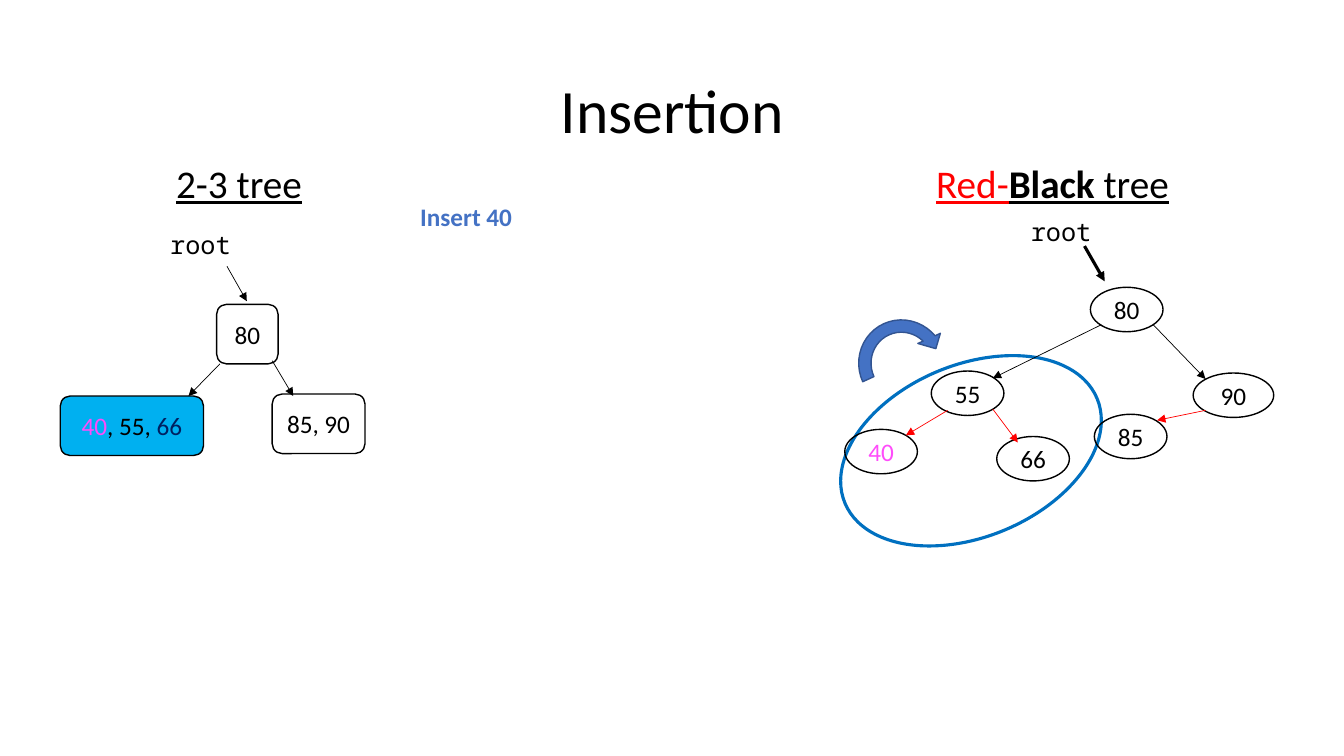
"""Build a slide that sets a 2-3 tree beside a red-black tree after inserting 40."""
from dataclasses import dataclass

from lxml import etree
from pptx import Presentation
from pptx import util as u
from pptx.dml.color import RGBColor
from pptx.enum import shapes, text
from pptx.oxml.ns import qn

KIND = shapes.MSO_SHAPE
ALIGN = text.PP_ALIGN


@dataclass(frozen=True)
class Theme:
    """Colours, fonts and type sizes of the slide."""
    black: str = "000000"
    red: str = "FF0000"
    pink: str = "FF4CFB"
    navy: str = "002060"
    sky: str = "00B0F0"
    ring: str = "0070C0"
    blue: str = "4472C4"
    edge: str = "325491"
    sans: str = "Calibri"
    mono: str = "Noto Sans Mono"
    title: int = 44
    head: int = 28
    body: int = 18


T = Theme()


def color(code):
    """Turn a hex code into a colour."""
    return RGBColor.from_string(code)


def write(frame, parts, size, font=T.sans, align=ALIGN.CENTER, under=None):
    """Write (words, colour, bold) parts as one paragraph."""
    para = frame.paragraphs[0]
    para.alignment = align
    for words, code, bold in parts:
        run = para.add_run()
        run.text = words
        run.font.size = u.Pt(size)
        run.font.name = font
        run.font.bold = bold
        run.font.underline = under
        run.font.color.rgb = color(code)
    return para


def label(slide, box, parts, size, **style):
    """Add a wrapped text box and return it."""
    item = slide.shapes.add_textbox(*map(u.Cm, box))
    item.text_frame.word_wrap = True
    write(item.text_frame, parts, size, **style)
    return item


def shape(slide, kind, box, line=T.black, width=1, fill=None, turn=0):
    """Add an outlined shape, filled only when a fill is given."""
    item = slide.shapes.add_shape(kind, *map(u.Cm, box))
    item.shadow.inherit = False
    item.rotation = turn
    item.line.color.rgb = color(line)
    item.line.width = u.Pt(width)
    if fill:
        item.fill.solid()
        item.fill.fore_color.rgb = color(fill)
    else:
        item.fill.background()
    return item


def node(slide, kind, box, parts, fill=None):
    """Add a tree node with its keys in the middle."""
    frame = shape(slide, kind, box, fill=fill).text_frame
    frame.margin_left = frame.margin_right = u.Cm(0)
    frame.margin_top = frame.margin_bottom = u.Cm(0)
    frame.vertical_anchor = text.MSO_ANCHOR.MIDDLE
    frame.word_wrap = False
    write(frame, parts, T.body)


def arrow(slide, ends, code=T.black, width=0.5):
    """Add a straight arrow given as x1, y1, x2, y2."""
    item = slide.shapes.add_connector(
        shapes.MSO_CONNECTOR.STRAIGHT, *map(u.Cm, ends))
    item.line.color.rgb = color(code)
    item.line.width = u.Pt(width)
    etree.SubElement(item.line._get_or_add_ln(), qn("a:tailEnd"), type="triangle")
    etree.SubElement(item._element.spPr, qn("a:effectLst"))


def heads(slide):
    """Add the title, the two headings and the step label."""
    title = label(slide, (2.34, 1.02, 29.21, 3.68),
                  [("Insertion", T.black, None)], T.title)
    title.text_frame.vertical_anchor = text.MSO_ANCHOR.MIDDLE
    title.text_frame.paragraphs[0].line_spacing = 0.9
    label(slide, (3.28, 3.89, 5.49, 1.45),
          [("2-3 tree", T.black, None)], T.head, under=True)
    label(slide, (23.11, 3.89, 6.83, 1.45),
          [("Red-", T.red, None), ("Black", T.black, True),
           (" tree", T.black, None)], T.head, under=True)
    label(slide, (10.34, 4.95, 8.59, 1.02),
          [("Insert 40", T.blue, True)], T.body, align=ALIGN.LEFT)
    for box in ((4.04, 5.66, 3.33, 1.02), (25.73, 5.33, 2.36, 1.02)):
        label(slide, box, [("root", T.black, None)], T.body,
              font=T.mono, align=ALIGN.LEFT)


def two_three(slide):
    """Draw the 2-3 tree."""
    high = 1.5
    node(slide, KIND.ROUNDED_RECTANGLE, (1.52, 9.98, 3.61, high),
         [("40", T.pink, None), (", 55, ", T.black, None),
          ("66", T.navy, None)], T.sky)
    for left, top, wide, keys in ((5.46, 7.67, 1.55, "80"),
                                  (6.86, 9.93, 2.34, "85, 90")):
        node(slide, KIND.ROUNDED_RECTANGLE, (left, top, wide, high),
             [(keys, T.black, None)])
    for ends in ((5.72, 6.71, 6.22, 7.59),
                 (5.54, 9.17, 4.75, 9.98),
                 (6.86, 9.09, 7.39, 9.98)):
        arrow(slide, ends)


def red_black(slide):
    """Draw the red-black tree with its ringed, rotating part."""
    wide, high = 1.83, 1.12
    shape(slide, KIND.OVAL, (22.3, 7.92, 4.34, 6.88), T.ring, 2.25, turn=67.5)
    for left, top, span, key, code in (
            (27.48, 7.24, wide, "80", T.black),
            (23.47, 9.35, wide, "55", T.black),
            (30.07, 9.4, 2.03, "90", T.black),
            (21.29, 10.82, wide, "40", T.pink),
            (25.12, 11, wide, "66", T.black),
            (27.58, 10.44, wide, "85", T.black)):
        node(slide, KIND.OVAL, (left, top, span, high), [(key, code, None)])
    arrow(slide, (27.33, 6.2, 27.84, 7.09), width=2.25)
    for ends in ((27.76, 8.18, 25.02, 9.53), (29.06, 8.18, 30.38, 9.55)):
        arrow(slide, ends)
    for ends in ((23.88, 10.34, 22.83, 10.97),
                 (25.02, 10.31, 25.65, 11.15),
                 (30.38, 10.34, 29.16, 10.59)):
        arrow(slide, ends, T.red)
    shape(slide, KIND.CIRCULAR_ARROW, (21.49, 7.9, 2.49, 2.54),
          T.edge, fill=T.blue, turn=335.7)


def main():
    """Build and save the slide."""
    deck = Presentation()
    deck.slide_width, deck.slide_height = u.Cm(33.87), u.Cm(19.05)
    slide = deck.slides.add_slide(deck.slide_layouts[6])
    heads(slide)
    two_three(slide)
    red_black(slide)
    deck.save("out.pptx")


if __name__ == "__main__":
    main()
